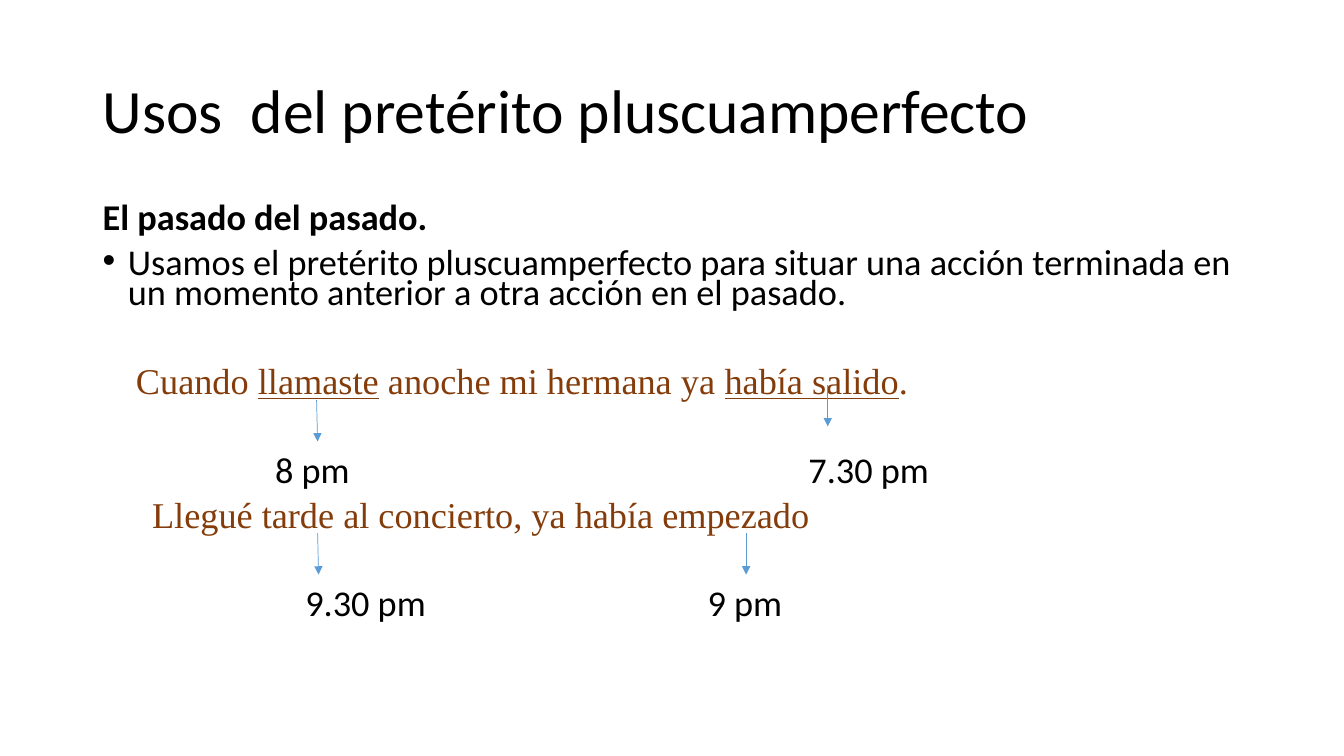
import pptx
import pptx.dml.color
import pptx.enum.shapes
import pptx.enum.text
import pptx.oxml
import pptx.oxml.ns
import pptx.util

WIDTH, HEIGHT = 13.33, 7.5
MARGIN = 0.92
BLACK, BROWN, BLUE = "000000", "843C0B", "5B9BD5"
SERIF = "Times New Roman"
SIZE, GAP = 25.9, 10
TITLE = "Usos  del pretérito pluscuamperfecto"
EXAMPLE = [("Cuando ", False), ("llamaste", True), (" anoche mi hermana ya ", False),
           ("había salido", True), (".", False)]
LINES = [
    ("El pasado del pasado.", dict(bold=True, before=0)),
    ("Usamos el pretérito pluscuamperfecto para situar una acción terminada en "
     "un momento anterior a otra acción en el pasado.", dict(indent=0.25, bullet="•")),
    (EXAMPLE, dict(font=SERIF, color=BROWN, indent=0.33, before=41.5)),
    ("Llegué tarde al concierto, ya había empezado",
     dict(font=SERIF, color=BROWN, indent=0.49, before=74)),
]
TIMES = [
    ("8 pm", (2.63, 4.51), (3.14, 3.97, 0.01)),
    ("7.30 pm", (7.92, 4.51), (8.21, 3.82, 0)),
    ("9.30 pm", (2.93, 5.83), (3.15, 5.29, 0.01)),
    ("9 pm", (6.92, 5.83), (7.4, 5.29, 0)),
]
TIME_WIDTH, TIME_HEIGHT = 1.6, 0.45
ARROW_DROP = 0.41


def rgb(value):
    """Turn a hex string into a colour."""
    return pptx.dml.color.RGBColor.from_string(value)


def add_element(parent, tag, **attributes):
    """Append a drawing element with attributes."""
    element = pptx.oxml.parse_xml(f"<{tag} {pptx.oxml.ns.nsdecls('a')}/>")
    for name, value in attributes.items():
        element.set(name, value)
    parent.append(element)


def add_box(page, left, top, width, height, middle=False):
    """Add a wrapping text box and return its text frame."""
    box = page.shapes.add_textbox(*map(pptx.util.Inches, (left, top, width, height)))
    anchors = pptx.enum.text.MSO_ANCHOR
    box.text_frame.word_wrap = True
    box.text_frame.vertical_anchor = anchors.MIDDLE if middle else anchors.TOP
    return box.text_frame


def write(para, text, font="Calibri", size=SIZE, color=BLACK, bold=False,
          before=GAP, spacing=0.7, indent=0, bullet=None):
    """Fill a paragraph with text, or with (text, underlined) pieces."""
    properties = para._p.get_or_add_pPr()
    properties.set("marL", str(pptx.util.Inches(indent)))
    properties.set("indent", str(-pptx.util.Inches(indent) if bullet else 0))
    if bullet:
        add_element(properties, "a:buFont", typeface="Arial")
        add_element(properties, "a:buChar", char=bullet)
    para.line_spacing = spacing
    para.space_before = pptx.util.Pt(before)
    for words, underlined in [(text, False)] if isinstance(text, str) else text:
        span = para.add_run()
        span.text = words
        span.font.name = font
        span.font.size = pptx.util.Pt(size)
        span.font.color.rgb = rgb(color)
        span.font.bold = bold
        span.font.underline = underlined


def add_arrow(page, left, top, slant):
    """Draw a thin arrow pointing down."""
    ends = (left, top, left + slant, top + ARROW_DROP)
    arrow = page.shapes.add_connector(pptx.enum.shapes.MSO_CONNECTOR.STRAIGHT,
                                      *map(pptx.util.Inches, ends))
    arrow.line.color.rgb = rgb(BLUE)
    arrow.line.width = pptx.util.Pt(0.5)
    add_element(arrow.line._get_or_add_ln(), "a:tailEnd", type="triangle")
    add_element(arrow._element.spPr, "a:effectLst")


def main():
    """Build the slide and save it."""
    deck = pptx.Presentation()
    deck.slide_width, deck.slide_height = map(pptx.util.Inches, (WIDTH, HEIGHT))
    page = deck.slides.add_slide(deck.slide_layouts[6])
    column = WIDTH - 2 * MARGIN
    title = add_box(page, MARGIN, 0.4, column, 1.45, middle=True)
    write(title.paragraphs[0], TITLE, size=44, before=0, spacing=0.9)
    body = add_box(page, MARGIN, 2, column, 4.76)
    for number, (text, style) in enumerate(LINES):
        para = body.add_paragraph() if number else body.paragraphs[0]
        write(para, text, **style)
    for time, corner, arrow in TIMES:
        label = add_box(page, *corner, TIME_WIDTH, TIME_HEIGHT)
        write(label.paragraphs[0], time, before=0)
        add_arrow(page, *arrow)
    deck.save("out.pptx")


if __name__ == "__main__":
    main()
